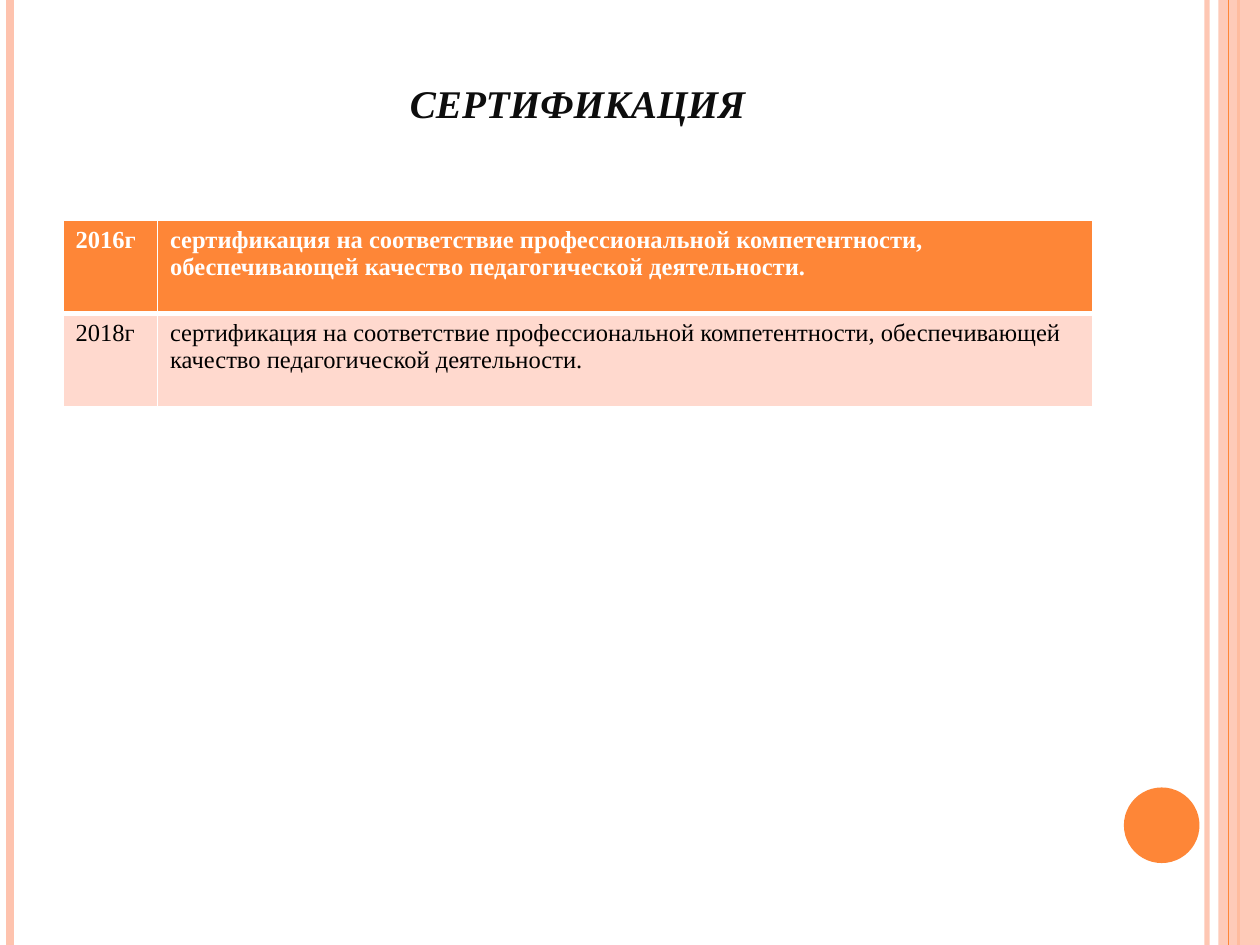
from pptx import Presentation
from pptx.dml.color import RGBColor
from pptx.enum.shapes import MSO_CONNECTOR, MSO_SHAPE
from pptx.enum.text import MSO_ANCHOR, PP_ALIGN
from pptx.oxml.xmlchemy import OxmlElement
from pptx.util import Inches, Pt

FONT = "Times New Roman"
ORANGE, PEACH, PALE = "FE8637", "FEC3AE", "FFD9CE"
WHITE, BLACK, INK = "FFFFFF", "000000", "0D0D0D"
TEXT = ("сертификация на соответствие профессиональной компетентности, "
        "обеспечивающей качество педагогической деятельности.")
ROWS = [("2016г", TEXT), ("2018г", TEXT)]


def rgb(value):
    return RGBColor.from_string(value)


def set_alpha(fill, percent):
    """Make the solid fill inside the given properties element translucent."""
    alpha = OxmlElement("a:alpha")
    alpha.set("val", str(percent * 1000))
    fill.find(".//{*}srgbClr").append(alpha)


def style_font(font, size, color, bold=False, italic=False):
    font.name, font.size = FONT, Pt(size)
    font.bold, font.italic = bold, italic
    font.color.rgb = rgb(color)


def add_rule(s, x, height, color, width, alpha=None):
    line = s.shapes.add_connector(MSO_CONNECTOR.STRAIGHT,
                                  Inches(x), 0, Inches(x), Inches(height))
    line.line.color.rgb = rgb(color)
    line.line.width = Pt(width)
    props = line._element.spPr
    props.append(OxmlElement("a:effectLst"))
    if alpha:
        set_alpha(props, alpha)


def add_solid(s, kind, x, y, w, h, color, alpha=None):
    sp = s.shapes.add_shape(kind, Inches(x), Inches(y), Inches(w), Inches(h))
    sp.shadow.inherit = False
    sp.fill.solid()
    sp.fill.fore_color.rgb = rgb(color)
    sp.line.fill.background()
    if alpha:
        set_alpha(sp._element.spPr, alpha)


def add_frame(s, width, height):
    """Draw the edge stripes and the corner disc."""
    add_rule(s, width - 0.42, height, PEACH, 3, alpha=93)
    add_rule(s, 0.08, height, PEACH, 4.5)
    add_rule(s, width - 0.17, height, ORANGE, 1.5)
    add_solid(s, MSO_SHAPE.RECTANGLE, width - 0.33, 0, 0.33, height, PEACH, alpha=87)
    add_rule(s, width - 0.25, height, ORANGE, 0.75)
    add_solid(s, MSO_SHAPE.OVAL, width - 1.08, height - 1.25, 0.6, 0.6, ORANGE)


def set_title(s, x, y, w, h):
    title = s.shapes.title
    title.left, title.top = Inches(x), Inches(y)
    title.width, title.height = Inches(w), Inches(h)
    tf = title.text_frame
    tf.text = "сертификация"
    tf.word_wrap = True
    tf.vertical_anchor = MSO_ANCHOR.BOTTOM
    p = tf.paragraphs[0]
    p.alignment = PP_ALIGN.CENTER
    style_font(p.font, 28, INK, bold=True, italic=True)
    style_font(p.runs[0].font, 28, INK, bold=True, italic=True)
    p.runs[0].font._element.set("cap", "small")


def set_borders(cell, bottom):
    props = cell._tc.get_or_add_tcPr()
    for i, (side, width) in enumerate([("L", 1), ("R", 1), ("T", 1), ("B", bottom)]):
        ln = OxmlElement(f"a:ln{side}")
        ln.set("w", str(Pt(width)))
        fill, color = OxmlElement("a:solidFill"), OxmlElement("a:srgbClr")
        color.set("val", WHITE)
        fill.append(color)
        ln.append(fill)
        props.insert(i, ln)


def add_certificates(s, x, y, w, year_width, row_height):
    table = s.shapes.add_table(len(ROWS), 2, Inches(x), Inches(y), Inches(w),
                               Inches(row_height * len(ROWS))).table
    table.columns[0].width = Inches(year_width)
    table.columns[1].width = Inches(w - year_width)
    for i, values in enumerate(ROWS):
        header = i == 0
        for j, value in enumerate(values):
            cell = table.cell(i, j)
            cell.text = value
            cell.fill.solid()
            cell.fill.fore_color.rgb = rgb(ORANGE if header else PALE)
            set_borders(cell, bottom=3 if header else 1)
            style_font(cell.text_frame.paragraphs[0].runs[0].font, 14,
                       WHITE if header else BLACK, bold=header)


def main():
    prs = Presentation()
    prs.slide_width, prs.slide_height = Inches(10), Inches(7.5)
    s = prs.slides.add_slide(prs.slide_layouts[5])
    add_frame(s, 10, 7.5)
    set_title(s, 0.5, 0.3, 8.17, 0.77)
    add_certificates(s, 0.5, 1.75, 8.17, year_width=0.75, row_height=0.74)
    prs.save("out.pptx")


if __name__ == "__main__":
    main()
